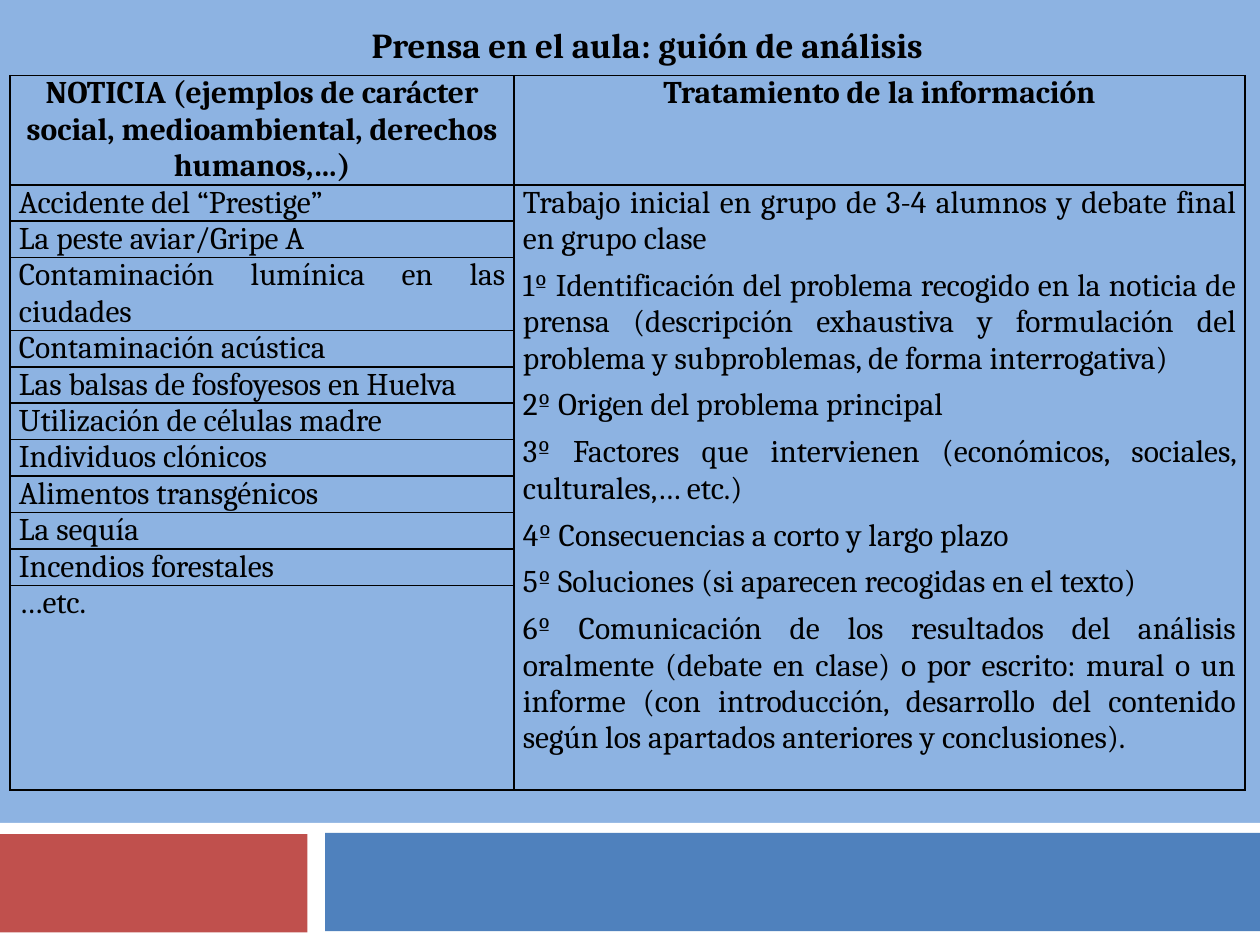
"""Builds the slide on analysing press news in the classroom."""
from lxml.etree import SubElement
from pptx import Presentation
from pptx.dml.color import RGBColor
from pptx.enum.shapes import MSO_SHAPE
from pptx.enum.text import MSO_ANCHOR, PP_ALIGN
from pptx.oxml.ns import qn
from pptx.util import Pt

TITLE = "Prensa en el aula: guión de análisis"
HEADS = [
    "NOTICIA (ejemplos de carácter social, medioambiental, derechos humanos,…)",
    "Tratamiento de la información",
]
NEWS = [
    "Accidente del “Prestige”",
    "La peste aviar/Gripe A",
    "Contaminación lumínica en las ciudades",
    "Contaminación acústica",
    "Las balsas de fosfoyesos en Huelva",
    "Utilización de células madre",
    "Individuos clónicos",
    "Alimentos transgénicos",
    "La sequía",
    "Incendios forestales",
    "…etc.",
]
STEPS = [
    "Trabajo inicial en grupo de 3-4 alumnos y debate final en grupo clase",
    "1º Identificación del problema recogido en la noticia de prensa (descripción exhaustiva y "
    "formulación del problema y subproblemas, de forma interrogativa)",
    "2º Origen del problema principal",
    "3º Factores que intervienen (económicos, sociales, culturales,… etc.)",
    "4º Consecuencias a corto y largo plazo",
    "5º Soluciones (si aparecen recogidas en el texto)",
    "6º Comunicación de los resultados del análisis oralmente (debate en clase) o por escrito: "
    "mural o un informe (con introducción, desarrollo del contenido según los apartados "
    "anteriores y conclusiones).",
]
BARS = [
    ("FFFFFF", 0, 470.2, 720, 69.8),
    ("C0504D", -0.7, 476.6, 176.4, 56.2),
    ("4F81BD", 185.8, 475.9, 534.2, 56.2),
]
COLS = [288, 417.6]
LINE = 20.8
ROWS = [3 * LINE] + [LINE] * 2 + [2 * LINE] + [LINE] * 7 + [117]
CELL = {"margin_left": Pt(5), "margin_right": Pt(5), "margin_top": 0, "margin_bottom": 0}
HEAD = {"alignment": PP_ALIGN.CENTER, "space_before": Pt(6)}
BODY = {"alignment": PP_ALIGN.JUSTIFY, "space_before": Pt(6)}
BOX = {"word_wrap": False, "vertical_anchor": MSO_ANCHOR.MIDDLE}


def tint(hue):
    return RGBColor.from_string(hue)


def put(thing, vals):
    for key, val in vals.items():
        setattr(thing, key, val)


def write(frame, texts, form, size=18, bold=False):
    for i, text in enumerate(texts):
        para = frame.paragraphs[0] if i == 0 else frame.add_paragraph()
        put(para, form)
        run = para.add_run()
        run.text = text
        put(run.font, {"name": "Cambria", "size": Pt(size), "bold": bold})
        run.font.color.rgb = tint("000000")


def edge(cell):
    props = cell._tc.get_or_add_tcPr()
    for side in "LRTB":
        line = SubElement(props, qn("a:ln" + side), w=str(Pt(1)))
        fill = SubElement(line, qn("a:solidFill"))
        SubElement(fill, qn("a:srgbClr"), val="000000")


deck = Presentation()
put(deck, {"slide_width": Pt(720), "slide_height": Pt(540)})
slide = deck.slides.add_slide(deck.slide_layouts[6])
back = slide.background.fill
back.solid()
back.fore_color.rgb = tint("8DB3E2")

for hue, *area in BARS:
    bar = slide.shapes.add_shape(MSO_SHAPE.RECTANGLE, *map(Pt, area))
    bar.shadow.inherit = False
    bar.fill.solid()
    bar.fill.fore_color.rgb = tint(hue)
    bar.line.fill.background()

area = map(Pt, (5.8, 43.2, sum(COLS), sum(ROWS)))
table = slide.shapes.add_table(len(ROWS), len(COLS), *area).table
put(table, {"first_row": False, "horz_banding": False})
for col, wide in zip(table.columns, COLS):
    col.width = Pt(wide)
for row, high in zip(table.rows, ROWS):
    row.height = Pt(high)
for cell in table.iter_cells():
    put(cell, CELL)
    edge(cell)
    cell.fill.background()
table.cell(1, 1).merge(table.cell(len(NEWS), 1))

for i, head in enumerate(HEADS):
    write(table.cell(0, i).text_frame, [head], HEAD, bold=True)
for i, item in enumerate(NEWS, 1):
    write(table.cell(i, 0).text_frame, [item], BODY)
write(table.cell(1, 1).text_frame, STEPS, BODY)

title = slide.shapes.add_textbox(Pt(205.2), Pt(9.4), Pt(342), Pt(32)).text_frame
put(title, BOX)
write(title, [TITLE], {"alignment": PP_ALIGN.LEFT}, size=20, bold=True)

deck.save("out.pptx")
